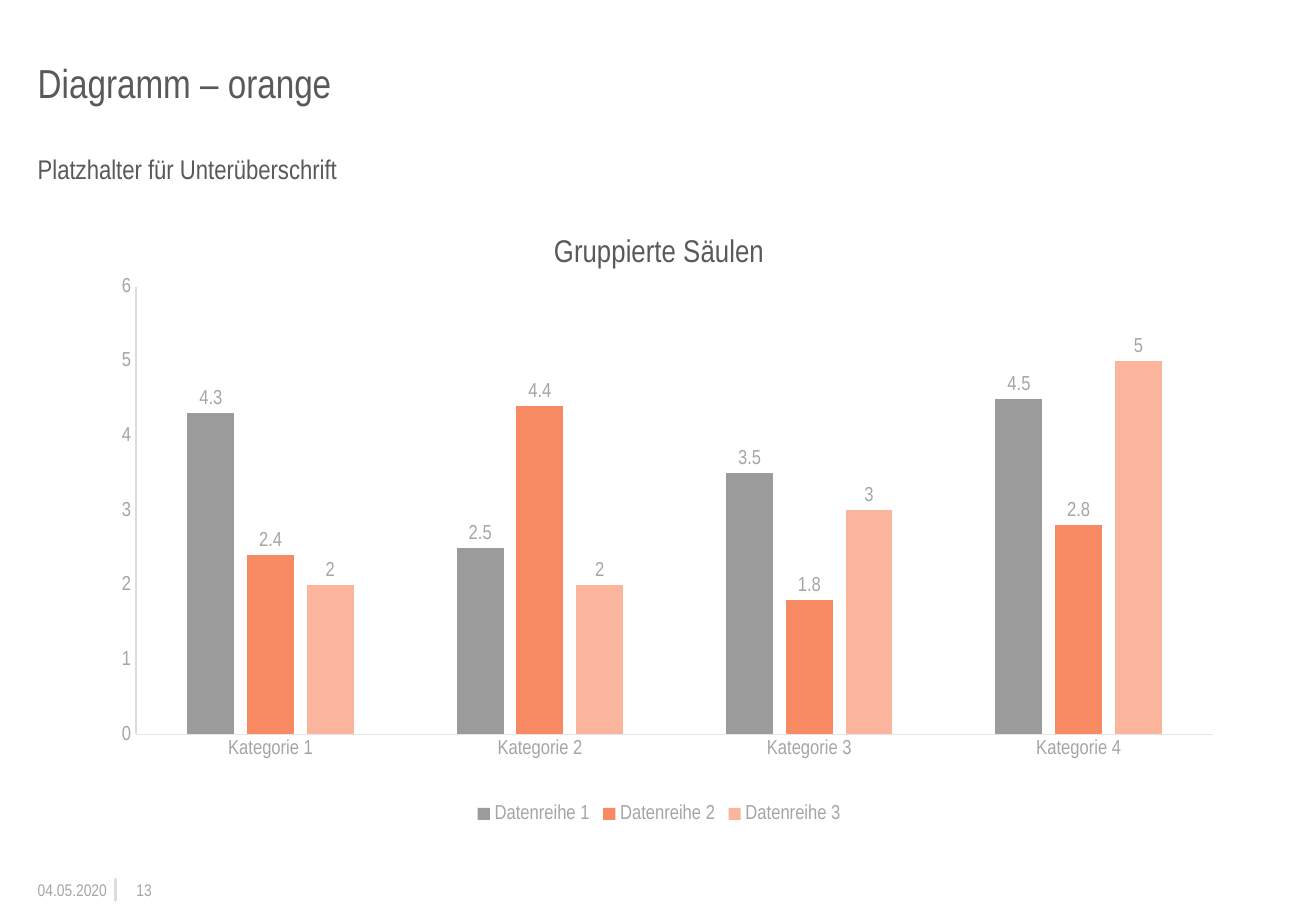
"""Build a slide with a grouped column chart in grey and orange."""
from dataclasses import dataclass

from lxml.etree import SubElement
from pptx import Presentation
from pptx.chart.axis import _BaseAxis
from pptx.chart.chart import Chart
from pptx.chart.data import CategoryChartData
from pptx.dml.color import RGBColor
from pptx.enum.chart import XL_CHART_TYPE, XL_LABEL_POSITION, XL_LEGEND_POSITION, XL_TICK_MARK
from pptx.enum.shapes import MSO_CONNECTOR
from pptx.enum.text import MSO_ANCHOR, PP_ALIGN
from pptx.oxml.ns import qn
from pptx.slide import Slide
from pptx.text.text import Font
from pptx.util import Cm, Pt

FONT = "Arial Narrow"
COLORS = {
    "text": "595959",
    "muted": "A5A5A5",
    "rule": "DCDCDC",
    "baseline": "E6E6E6",
    "grey": "9B9B9B",
    "orange": "F78A63",
    "light_orange": "FAB59C",
}
CATEGORIES = [f"Kategorie {n}" for n in range(1, 5)]
PLOT_AREA = {"x": 0.079, "y": 0.122, "w": 0.867, "h": 0.726}


@dataclass
class Label:
    text: str
    left: float
    top: float
    width: float
    height: float
    size: float
    color: str = "text"
    bottom_inset: float = 0
    line_spacing: float = 1.0
    align: PP_ALIGN = PP_ALIGN.LEFT
    anchor: MSO_ANCHOR = MSO_ANCHOR.TOP


@dataclass
class Series:
    name: str
    values: tuple[float, ...]
    color: str


LABELS = [
    Label("Diagramm – orange", 0.79, 1.32, 26.01, 1.85, 24, bottom_inset=0.3, line_spacing=0.9),
    Label("Platzhalter für Unterüberschrift", 0.79, 3.2, 26.01, 0.91, 16),
    Label("04.05.2020", 0.79, 18.39, 1.55, 0.43, 10, "muted", anchor=MSO_ANCHOR.MIDDLE),
    Label("13", 2.59, 18.39, 0.58, 0.43, 10, "muted",
          align=PP_ALIGN.RIGHT, anchor=MSO_ANCHOR.MIDDLE),
]
SERIES = [
    Series("Datenreihe 1", (4.3, 2.5, 3.5, 4.5), "grey"),
    Series("Datenreihe 2", (2.4, 4.4, 1.8, 2.8), "orange"),
    Series("Datenreihe 3", (2, 2, 3, 5), "light_orange"),
]


def rgb(name: str) -> RGBColor:
    return RGBColor.from_string(COLORS[name])


def set_font(font: Font, size: float, color: str) -> None:
    font.name = FONT
    font.size = Pt(size)
    font.bold = False
    font.color.rgb = rgb(color)


def add_label(slide: Slide, label: Label) -> None:
    box = slide.shapes.add_textbox(
        Cm(label.left), Cm(label.top), Cm(label.width), Cm(label.height))
    tf = box.text_frame
    tf.word_wrap = True
    tf.margin_left = tf.margin_right = tf.margin_top = 0
    tf.margin_bottom = Cm(label.bottom_inset)
    tf.vertical_anchor = label.anchor
    p = tf.paragraphs[0]
    p.text = label.text
    p.alignment = label.align
    p.line_spacing = label.line_spacing
    set_font(p.font, label.size, label.color)


def add_footer_rule(slide: Slide) -> None:
    rule = slide.shapes.add_connector(
        MSO_CONNECTOR.STRAIGHT, Cm(2.41), Cm(18.39), Cm(2.41), Cm(18.82))
    rule.line.color.rgb = rgb("rule")
    rule.line.width = Pt(2)
    sp_pr = rule._element.spPr
    sp_pr.find(qn("a:ln")).set("cap", "rnd")
    SubElement(sp_pr, qn("a:effectLst"))


def style_axis(axis: _BaseAxis, line_color: str) -> None:
    axis.major_tick_mark = axis.minor_tick_mark = XL_TICK_MARK.NONE
    axis.has_major_gridlines = False
    axis.format.line.color.rgb = rgb(line_color)
    axis.format.line.width = Pt(0.75)
    set_font(axis.tick_labels.font, 12, "muted")


def place_plot_area(chart: Chart) -> None:
    plot_area = chart._chartSpace.chart.plotArea
    for old in plot_area.findall(qn("c:layout")):
        plot_area.remove(old)
    layout = SubElement(plot_area, qn("c:layout"))
    plot_area.insert(0, layout)
    manual = SubElement(layout, qn("c:manualLayout"))
    settings = {"layoutTarget": "inner", "xMode": "edge", "yMode": "edge", **PLOT_AREA}
    for tag, value in settings.items():
        SubElement(manual, qn(f"c:{tag}")).set("val", str(value))


def add_column_chart(slide: Slide) -> None:
    data = CategoryChartData()
    data.categories = CATEGORIES
    for series in SERIES:
        data.add_series(series.name, series.values)
    chart = slide.shapes.add_chart(
        XL_CHART_TYPE.COLUMN_CLUSTERED, Cm(0.79), Cm(4.42), Cm(25.98), Cm(12.9), data).chart
    set_font(chart.font, 10, "text")

    chart.has_title = True
    p = chart.chart_title.text_frame.paragraphs[0]
    p.text = "Gruppierte Säulen"
    set_font(p.font, 18.6, "text")

    chart.has_legend = True
    chart.legend.position = XL_LEGEND_POSITION.BOTTOM
    chart.legend.include_in_layout = False
    set_font(chart.legend.font, 12, "muted")

    style_axis(chart.category_axis, "baseline")
    style_axis(chart.value_axis, "rule")
    chart.value_axis.minimum_scale = 0
    chart.value_axis.maximum_scale = 6
    chart.value_axis.major_unit = 1

    plot = chart.plots[0]
    plot.gap_width = 219
    plot.overlap = -27
    plot.vary_by_categories = False
    for bars, series in zip(plot.series, SERIES):
        bars.format.fill.solid()
        bars.format.fill.fore_color.rgb = rgb(series.color)
        labels = bars.data_labels
        labels.show_value = True
        labels.position = XL_LABEL_POSITION.OUTSIDE_END
        set_font(labels.font, 12, "muted")
    place_plot_area(chart)


def main() -> None:
    prs = Presentation()
    prs.slide_width = Cm(27.51)
    prs.slide_height = Cm(19.05)
    slide = prs.slides.add_slide(prs.slide_layouts[6])
    add_footer_rule(slide)
    for label in LABELS:
        add_label(slide, label)
    add_column_chart(slide)
    prs.save("out.pptx")


if __name__ == "__main__":
    main()
